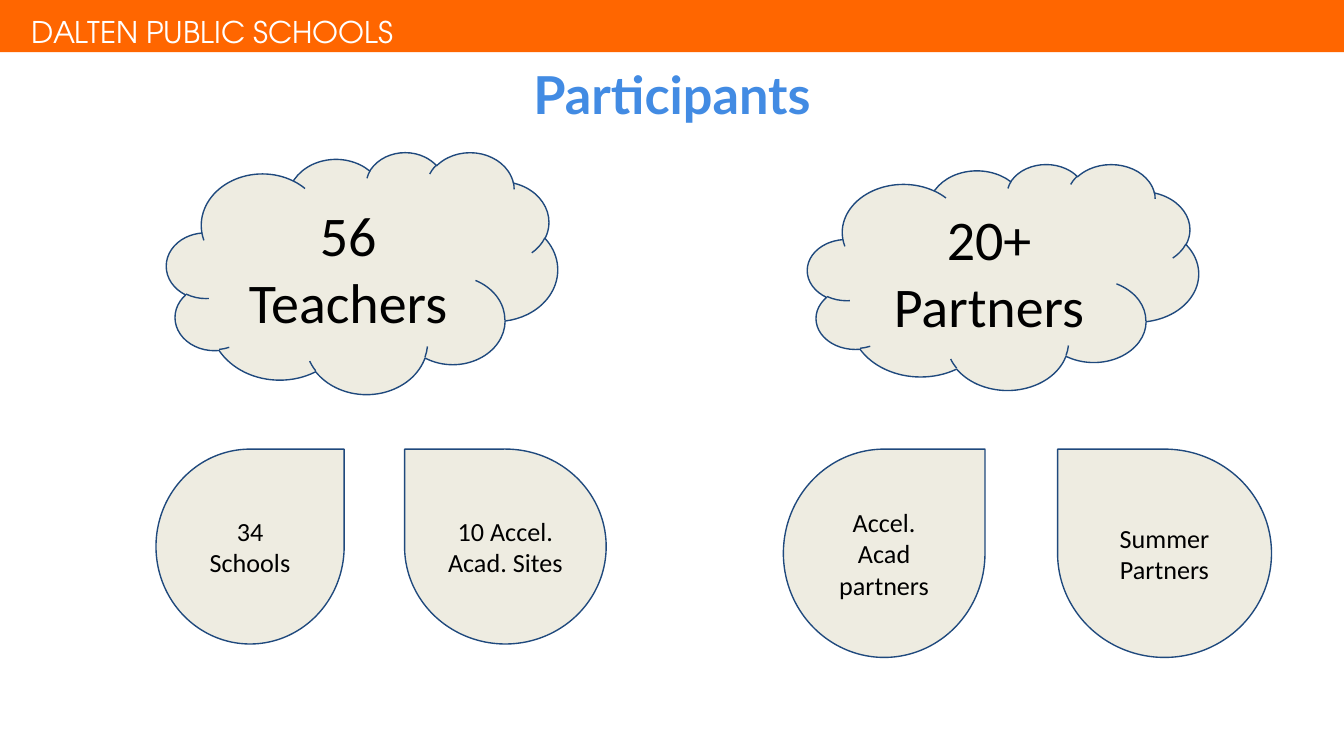
import pptx
import pptx.dml.color
import pptx.enum.shapes
import pptx.enum.text
import pptx.util

Pt = pptx.util.Pt
RGBColor = pptx.dml.color.RGBColor
Shape = pptx.enum.shapes.MSO_SHAPE
Align = pptx.enum.text.PP_ALIGN
Anchor = pptx.enum.text.MSO_ANCHOR

ORANGE = RGBColor(0xFF, 0x66, 0x00)
WHITE = RGBColor(0xFF, 0xFF, 0xFF)
BLUE = RGBColor(0x42, 0x8B, 0xE3)
NAVY = RGBColor(0x1F, 0x49, 0x7D)
CREAM = RGBColor(0xEE, 0xEC, 0xE1)
BLACK = RGBColor(0, 0, 0)

HEADER_FONT = {"name": "TeX Gyre Adventor", "size": Pt(16), "bold": False}
TITLE_FONT = {"name": "Lato", "size": Pt(28), "bold": True}
CLOUD_FONT = {"name": "Calibri", "size": Pt(30), "bold": False}
DROP_FONT = {"name": "Calibri", "size": Pt(14), "bold": False}


def write_text(shape, text, font, color, alignment=Align.CENTER,
               anchor=Anchor.MIDDLE, margin=7.2, wrap=True):
    """Fill the text frame of a shape with one formatted paragraph."""
    frame = shape.text_frame
    layout = {
        "word_wrap": wrap, "vertical_anchor": anchor,
        "margin_left": Pt(7.2), "margin_right": Pt(7.2),
        "margin_top": Pt(margin), "margin_bottom": Pt(margin),
    }
    for name, value in layout.items():
        setattr(frame, name, value)
    paragraph = frame.paragraphs[0]
    paragraph.alignment = alignment
    run = paragraph.add_run()
    run.text = text
    for name, value in font.items():
        setattr(run.font, name, value)
    run.font.color.rgb = color


def add_filled_shape(slide, kind, box, fill):
    """Add a preset shape with a plain fill and no shadow."""
    shape = slide.shapes.add_shape(kind, *map(Pt, box))
    shape.shadow.inherit = False
    shape.fill.solid()
    shape.fill.fore_color.rgb = fill
    return shape


def add_header(slide, box):
    """Draw the band with the name of the school district."""
    left, top = box[:2]
    band = add_filled_shape(slide, Shape.RECTANGLE, box, ORANGE)
    band.line.fill.background()
    label = slide.shapes.add_textbox(
        Pt(left + 10), Pt(top + 3.6), Pt(217.4), Pt(20.2))
    write_text(label, "DALTEN PUBLIC SCHOOLS", HEADER_FONT, WHITE,
               Align.LEFT, Anchor.TOP, 3.6, False)


def add_title(slide, box):
    """Place the centred slide title."""
    title = slide.shapes.add_textbox(*map(Pt, box))
    write_text(title, "Participants", TITLE_FONT, BLUE)


def add_bubble(slide, kind, box, text, font, flipped=False):
    """Draw one outlined shape with its caption."""
    bubble = add_filled_shape(slide, kind, box, CREAM)
    bubble.line.color.rgb = NAVY
    bubble.line.width = Pt(0.75)
    if flipped:
        bubble.element.spPr.xfrm.set("flipH", "1")
    write_text(bubble, text, font, BLACK)


def add_group(slide, box, cloud_inset, cloud_height, cloud_text,
              drop_height, drop_widths, drop_texts):
    """Place a cloud over two teardrops that face each other in a box."""
    left, top, width, height = box
    cloud_box = (left + cloud_inset, top + (129.6 - cloud_height) * 0.75,
                 209.5, cloud_height)
    add_bubble(slide, Shape.CLOUD, cloud_box, cloud_text, CLOUD_FONT)
    drop_top = top + height - drop_height
    drop_lefts = (left, left + width - drop_widths[1])
    for index, text in enumerate(drop_texts):
        drop_box = (drop_lefts[index], drop_top,
                    drop_widths[index], drop_height)
        add_bubble(slide, Shape.TEAR, drop_box, text, DROP_FONT, index == 1)


def main():
    """Build the participants slide and save it."""
    presentation = pptx.Presentation()
    presentation.slide_width = Pt(720)
    presentation.slide_height = Pt(405)
    slide = presentation.slides.add_slide(presentation.slide_layouts[6])
    add_header(slide, (0, 0, 722, 28))
    add_title(slide, (36, 16.5, 648, 67.5))
    add_group(slide, (83.6, 81.4, 241.2, 263.6), 5.6, 129.6, "56 Teachers",
              104.4, (100.8, 108), ("34 Schools", "10 Accel. Acad. Sites"))
    add_group(slide, (419.7, 81.3, 261.5, 270.9), 12.9, 121, "20+ Partners",
              111.6, (108, 114.6), ("Accel. Acad partners", "Summer Partners"))
    presentation.save("out.pptx")


if __name__ == "__main__":
    main()
